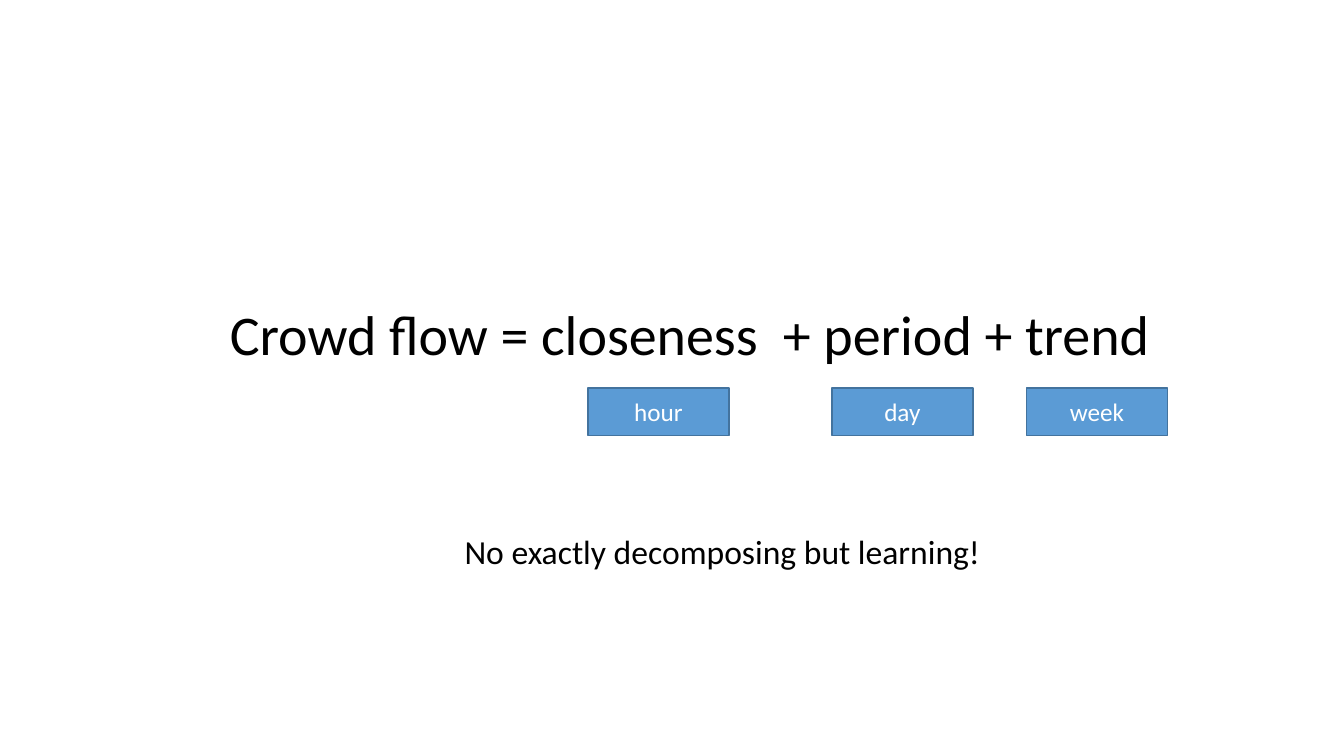
from dataclasses import dataclass

from pptx import Presentation
from pptx.dml.color import RGBColor as Rgb
from pptx.enum.shapes import MSO_SHAPE as Shape
from pptx.enum.text import MSO_ANCHOR as Anchor
from pptx.enum.text import MSO_AUTO_SIZE as Fit
from pptx.enum.text import PP_ALIGN as Align
from pptx.util import Inches, Pt

WIDE, HIGH = Inches(13.33), Inches(7.5)


@dataclass(frozen=True)
class Theme:
    font: str = "Calibri"
    ink: Rgb = Rgb(0, 0, 0)
    pale: Rgb = Rgb(255, 255, 255)
    fill: Rgb = Rgb.from_string("5B9BD5")
    edge: Rgb = Rgb.from_string("43739E")
    head: int = 40
    note: int = 24
    tag: int = 18


THEME = Theme()

# Percent of the slide's width (left) for each term's tag
TAGS = {"hour": 43.74, "day": 61.89, "week": 76.37}
TAG_TOP, TAG_WIDE, TAG_HIGH = 51.33, 10.5, 6.27


def area(left, top, wide, high):
    """Turn percentages of the slide into lengths."""
    return (int(WIDE * left / 100), int(HIGH * top / 100),
            int(WIDE * wide / 100), int(HIGH * high / 100))


def write(shape, text, size, color, align=Align.LEFT, anchor=Anchor.TOP):
    frame = shape.text_frame
    frame.text = text
    frame.word_wrap = True
    frame.vertical_anchor = anchor
    para = frame.paragraphs[0]
    para.alignment = align
    font = para.runs[0].font
    font.name, font.size = THEME.font, Pt(size)
    font.color.rgb = color
    return frame


def add_head(slide, text, box):
    head = slide.shapes.title
    head.left, head.top, head.width, head.height = box
    frame = write(head, text, THEME.head, THEME.ink)
    frame.word_wrap = False
    frame.auto_size = Fit.SHAPE_TO_FIT_TEXT


def add_tag(slide, text, box):
    tag = slide.shapes.add_shape(Shape.RECTANGLE, *box)
    tag.shadow.inherit = False
    tag.fill.solid()
    tag.fill.fore_color.rgb = THEME.fill
    tag.line.color.rgb = THEME.edge
    tag.line.width = Pt(1)
    write(tag, text, THEME.tag, THEME.pale, Align.CENTER, Anchor.MIDDLE)


def add_note(slide, text, box):
    note = slide.shapes.add_textbox(*box)
    frame = write(note, text, THEME.note, THEME.ink)
    frame.auto_size = Fit.SHAPE_TO_FIT_TEXT


def main():
    deck = Presentation()
    deck.slide_width, deck.slide_height = WIDE, HIGH
    slide = deck.slides.add_slide(deck.slide_layouts.get_by_name("Title Only"))
    add_head(slide, "Crowd flow = closeness  + period + trend",
             area(16.35, 38.93, 70.67, 10.27))
    for text, left in TAGS.items():
        add_tag(slide, text, area(left, TAG_TOP, TAG_WIDE, TAG_HIGH))
    add_note(slide, "No exactly decomposing but learning!",
             area(33.83, 69.6, 63.54, 6.67))
    deck.save("out.pptx")


if __name__ == "__main__":
    main()
